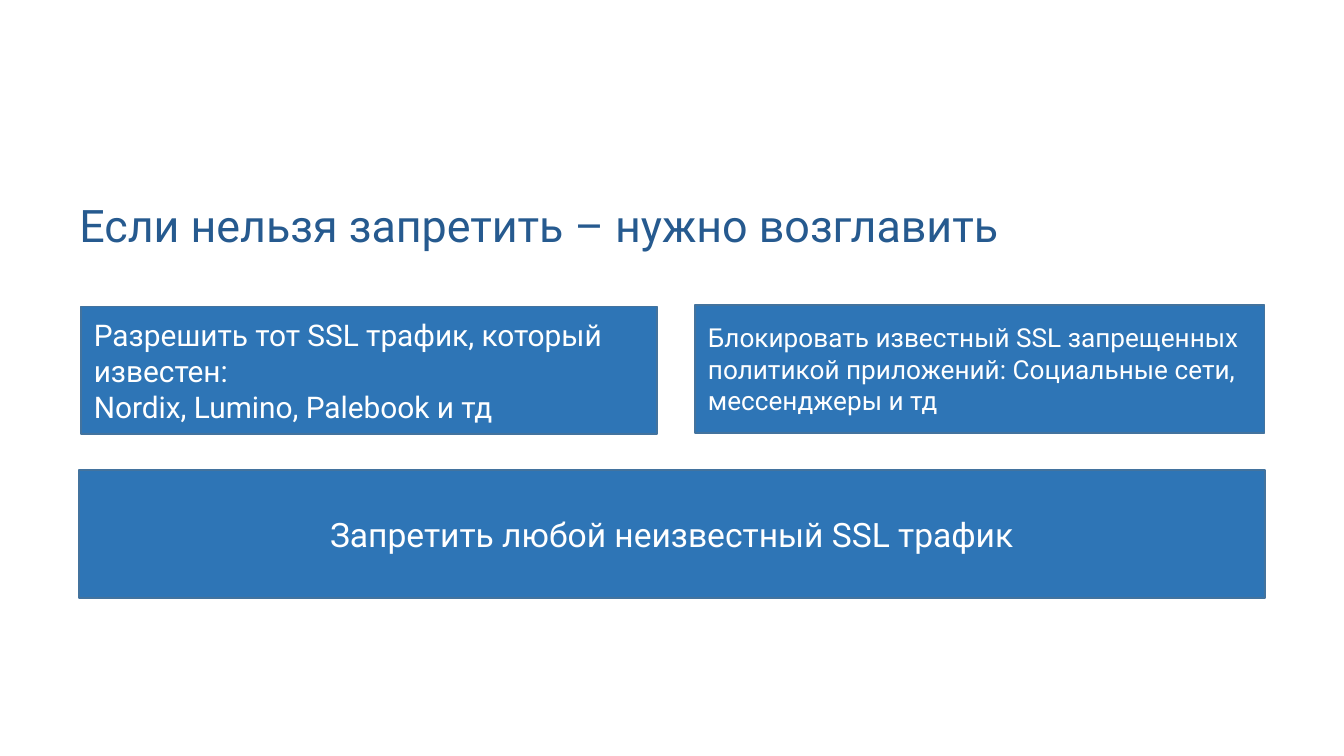
from dataclasses import dataclass

import pptx
import pptx.dml.color
import pptx.enum.shapes
import pptx.enum.text
import pptx.slide
import pptx.text.text
import pptx.util

Pt = pptx.util.Pt
RGBColor = pptx.dml.color.RGBColor
Align = pptx.enum.text.PP_ALIGN
Anchor = pptx.enum.text.MSO_ANCHOR

TITLE_BLUE = RGBColor(0x26, 0x5A, 0x8F)
RULE_FILL = RGBColor(0x2E, 0x75, 0xB6)
RULE_EDGE = RGBColor(0x43, 0x73, 0x9E)
WHITE = RGBColor(0xFF, 0xFF, 0xFF)
FONT = "Roboto"
RULE_HEIGHT = 68.4


@dataclass(frozen=True)
class TrafficRule:
    left: float
    top: float
    width: float
    size: float
    lines: tuple[str, ...]
    align: Align = Align.LEFT


RULES = (
    TrafficRule(43.2, 164.2, 308.9, 16, (
        "Разрешить тот SSL трафик, который известен:",
        "Nordix, Lumino, Palebook и тд",
    )),
    TrafficRule(372.2, 163.4, 305.3, 14, (
        "Блокировать известный SSL запрещенных политикой приложений: "
        "Социальные сети, мессенджеры и тд",
    )),
    TrafficRule(42.5, 252, 635, 18,
                ("Запретить любой неизвестный SSL трафик",), Align.CENTER),
)


def add_run(paragraph: pptx.text.text._Paragraph, text: str,
            size: float, color: RGBColor) -> None:
    run = paragraph.add_run()
    run.text = text
    run.font.name = FONT
    run.font.size = Pt(size)
    run.font.color.rgb = color


def set_title(slide: pptx.slide.Slide, text: str) -> None:
    title = slide.shapes.title
    title.left, title.top = Pt(35.3), Pt(105.8)
    title.width, title.height = Pt(659.5), Pt(48.2)
    frame = title.text_frame
    frame.auto_size = pptx.enum.text.MSO_AUTO_SIZE.NONE
    frame.vertical_anchor = Anchor.TOP
    heading = frame.paragraphs[0]
    heading.alignment = Align.LEFT
    heading.line_spacing = 0.9
    add_run(heading, text, 24, TITLE_BLUE)


def draw_rule(slide: pptx.slide.Slide, rule: TrafficRule) -> None:
    box = slide.shapes.add_shape(
        pptx.enum.shapes.MSO_SHAPE.RECTANGLE,
        Pt(rule.left), Pt(rule.top), Pt(rule.width), Pt(RULE_HEIGHT))
    box.shadow.inherit = False
    box.fill.solid()
    box.fill.fore_color.rgb = RULE_FILL
    box.line.color.rgb = RULE_EDGE
    box.line.width = Pt(1)
    frame = box.text_frame
    frame.word_wrap = True
    frame.vertical_anchor = Anchor.MIDDLE
    for index, line in enumerate(rule.lines):
        paragraph = frame.add_paragraph() if index else frame.paragraphs[0]
        paragraph.alignment = rule.align
        add_run(paragraph, line, rule.size, WHITE)


def main() -> None:
    deck = pptx.Presentation()
    deck.slide_width, deck.slide_height = Pt(720), Pt(405)
    slide = deck.slides.add_slide(deck.slide_layouts.get_by_name("Title Only"))
    set_title(slide, "Если нельзя запретить – нужно возглавить")
    for rule in RULES:
        draw_rule(slide, rule)
    deck.save("out.pptx")


if __name__ == "__main__":
    main()
